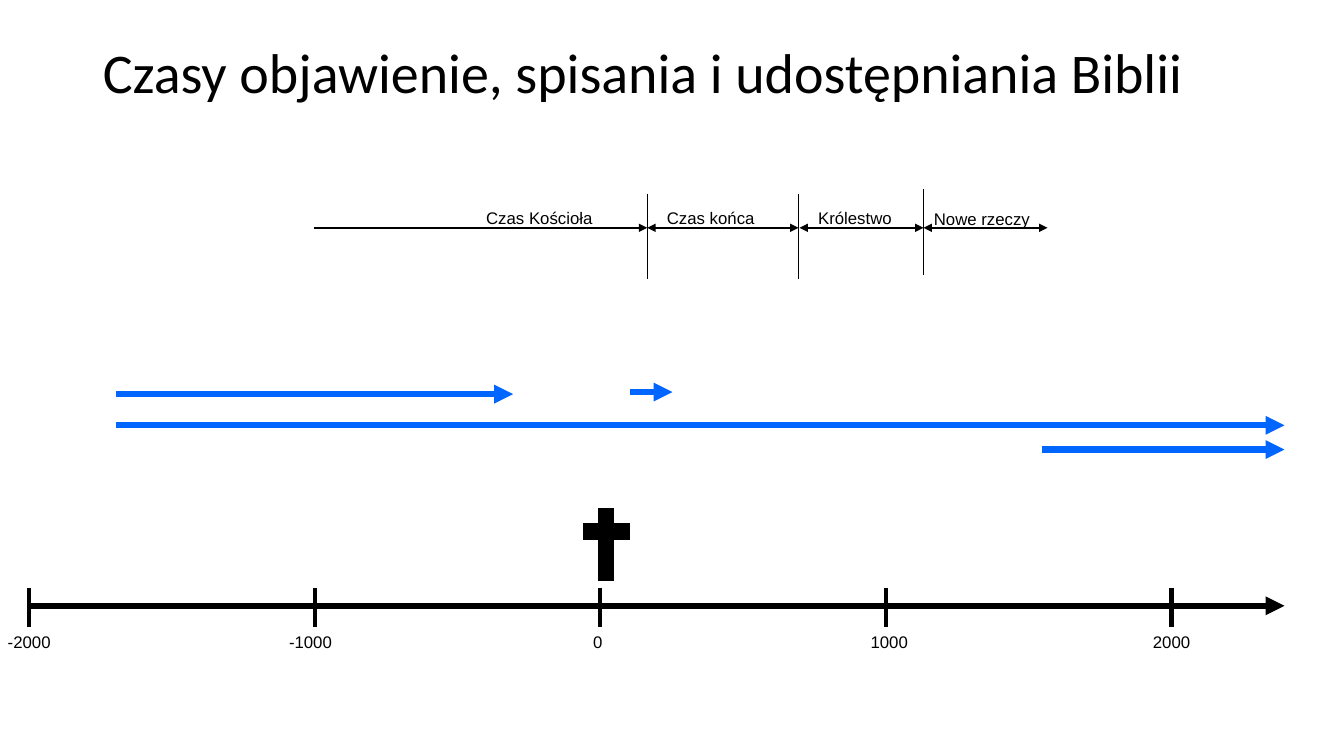
from dataclasses import dataclass

from lxml import etree
from pptx import Presentation
from pptx import util as u
from pptx.dml.color import RGBColor
from pptx.enum import shapes, text
from pptx.oxml.ns import qn


@dataclass(frozen=True)
class Theme:
    black: RGBColor = RGBColor(0x00, 0x00, 0x00)
    blue: RGBColor = RGBColor(0x00, 0x66, 0xFF)
    title_font: str = "Calibri"
    label_font: str = "Arial"
    title_size: int = 40
    label_size: int = 12


theme = Theme()
prs = Presentation()
prs.slide_width, prs.slide_height = u.Inches(13.33), u.Inches(7.5)
s = prs.slides.add_slide(prs.slide_layouts[5])


def add_line(x1, y1, x2, y2, width, color=theme.black, arrows=()):
    ends = [u.Inches(v) for v in (x1, y1, x2, y2)]
    cx = s.shapes.add_connector(shapes.MSO_CONNECTOR.STRAIGHT, *ends)
    cx.line.width = u.Pt(width)
    cx.line.color.rgb = color
    ln = cx.line._get_or_add_ln()
    for end in arrows:
        etree.SubElement(ln, qn(f"a:{end}"), type="triangle")
    etree.SubElement(cx._element.spPr, qn("a:effectLst"))


def add_label(caption, center, top, width, wrap=True):
    sp = s.shapes.add_textbox(u.Inches(center - width / 2), u.Inches(top),
                              u.Inches(width), u.Inches(0.26))
    tf = sp.text_frame
    tf.margin_left = tf.margin_right = tf.margin_top = tf.margin_bottom = u.Inches(0.03)
    tf.vertical_anchor = text.MSO_ANCHOR.MIDDLE
    tf.auto_size = text.MSO_AUTO_SIZE.SHAPE_TO_FIT_TEXT
    tf.word_wrap = wrap
    p = tf.paragraphs[0]
    p.text = caption
    p.alignment = text.PP_ALIGN.CENTER
    p.font.name = theme.label_font
    p.font.size = u.Pt(theme.label_size)
    p.font.color.rgb = theme.black


title = s.shapes.title
title.left, title.top = u.Inches(0.92), u.Inches(0.36)
title.width, title.height = u.Inches(11.5), u.Inches(0.78)
tf = title.text_frame
tf.vertical_anchor = text.MSO_ANCHOR.MIDDLE
p = tf.paragraphs[0]
p.text = "Czasy objawienie, spisania i udostępniania Biblii"
p.alignment = text.PP_ALIGN.LEFT
p.line_spacing = 0.9
p.font.name = theme.title_font
p.font.size = u.Pt(theme.title_size)
p.font.color.rgb = theme.black

eras = [
    ("Czas Kościoła", 3.11, 6.42, 5.35, 2.03, 1.44, ["tailEnd"]),
    ("Czas końca", 6.42, 7.92, 7.05, 2.03, 1.14, ["headEnd", "tailEnd"]),
    ("Królestwo", 7.93, 9.16, 8.48, 2.03, 0.93, ["headEnd", "tailEnd"]),
    ("Nowe rzeczy", 9.16, 10.39, 9.74, 2.04, 1.16, ["headEnd", "tailEnd"]),
]
for caption, start, end, center, top, width, arrows in eras:
    add_line(start, 2.26, end, 2.26, 1.5, arrows=arrows)
    add_label(caption, center, top, width)

for x, top in [(6.42, 1.92), (7.92, 1.92), (9.16, 1.88)]:
    add_line(x, top, x, top + 0.85, 0.5)

periods = [(1.15, 5.09, 3.91), (6.25, 6.67, 3.89), (1.15, 12.74, 4.22), (10.33, 12.74, 4.46)]
for start, end, y in periods:
    add_line(start, y, end, y, 4.5, theme.blue, ["tailEnd"])

add_line(5.78, 5.27, 6.25, 5.27, 12)
add_line(6.01, 5.04, 6.01, 5.76, 12)

add_line(0.3, 6.01, 12.74, 6.01, 4.5, arrows=["tailEnd"])
years = [("-2000", 0.29), ("-1000", 3.08), ("0", 5.93), ("1000", 8.82), ("2000", 11.62)]
for i, (year, center) in enumerate(years):
    tick = 0.29 + 11.33 / 4 * i
    add_line(tick, 5.83, tick, 6.22, 3)
    add_label(year, center, 6.24, 0.56, wrap=False)

prs.save("out.pptx")
